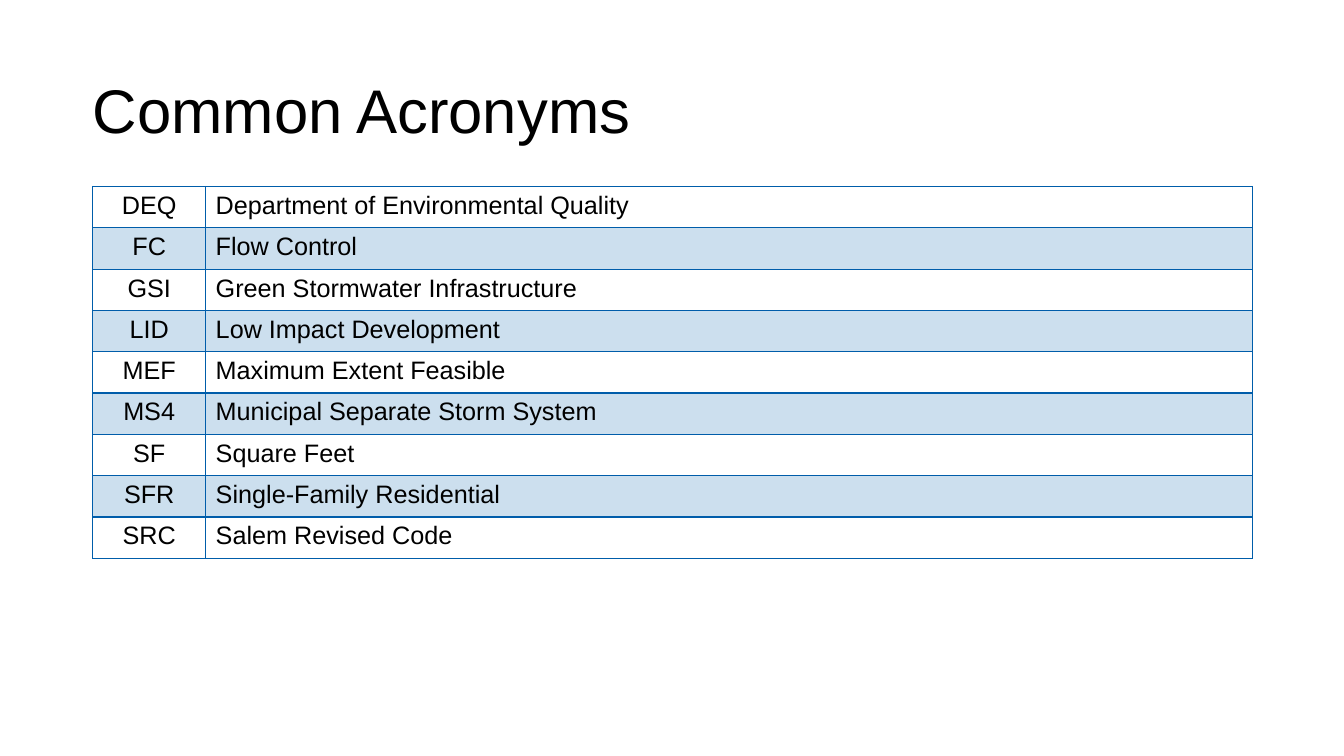
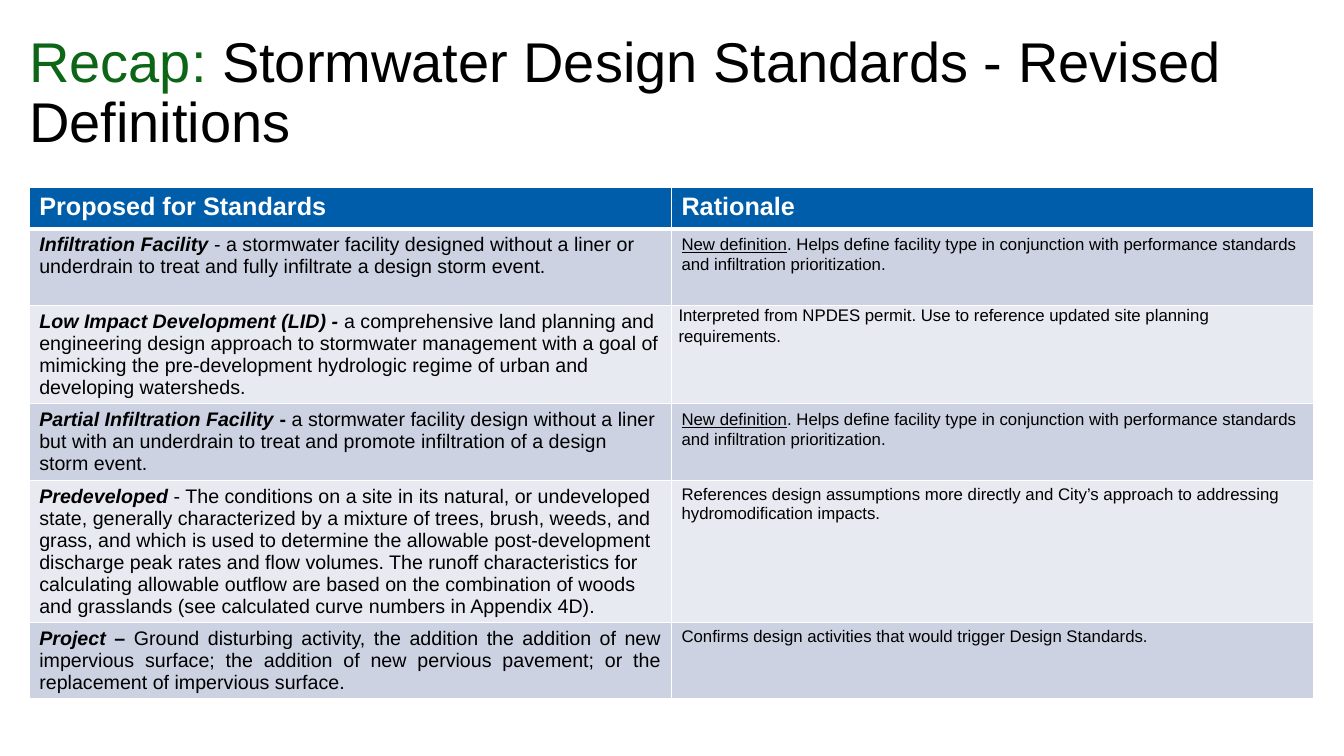
"""Build two stormwater slides: a table of acronyms and a table of revised definitions."""
from lxml.etree import SubElement
from pptx import Presentation
from pptx.dml.color import RGBColor as RGB
from pptx.enum.text import MSO_ANCHOR as Anchor, MSO_AUTO_SIZE as AutoSize, PP_ALIGN as Align
from pptx.oxml.ns import qn
from pptx.util import Inches, Pt

FONT = "Arial"
BLACK = RGB(0x00, 0x00, 0x00)
WHITE = RGB(0xFF, 0xFF, 0xFF)
BLUE = RGB(0x00, 0x5D, 0xAA)
PALE_BLUE = RGB(0xCC, 0xDF, 0xEE)
GREEN = RGB(0x0C, 0x66, 0x16)
BAND_DARK = RGB(0xCC, 0xD2, 0xE2)
BAND_LIGHT = RGB(0xE7, 0xEA, 0xF1)

SLIDE_W, SLIDE_H = 13.33, 7.5
ROW_H = 0.41
TITLE_H = 1.45
ACRONYM_LEFT, ACRONYM_COLS = 0.92, (1.12, 10.38)
RECAP_LEFT, RECAP_COLS = 0.29, (6.37, 6.37)

TITLES = [
    (ACRONYM_LEFT, 0.4, sum(ACRONYM_COLS), 44, [("Common Acronyms", "")]),
    (RECAP_LEFT, 0.21, sum(RECAP_COLS), 40,
     [("Recap: ", ""), ("Stormwater Design Standards - Revised Definitions", "")]),
]

ACRONYMS = [
    ("DEQ", "Department of Environmental Quality"),
    ("FC", "Flow Control"),
    ("GSI", "Green Stormwater Infrastructure"),
    ("LID", "Low Impact Development"),
    ("MEF", "Maximum Extent Feasible"),
    ("MS4", "Municipal Separate Storm System"),
    ("SF", "Square Feet"),
    ("SFR", "Single-Family Residential"),
    ("SRC", "Salem Revised Code"),
]

NEW_DEFINITION = [
    ("New definition", "u"),
    (". Helps define facility type in conjunction with performance standards "
     "and infiltration prioritization.", ""),
]

DEFINITIONS = [
    (ROW_H, [("Proposed for Standards", "b")], [("Rationale", "b")]),
    (0.76,
     [("Infiltration Facility ", "bi"),
      ("- a stormwater facility designed without a liner or underdrain to treat and fully "
       "infiltrate a design storm event.", "")],
     NEW_DEFINITION),
    (0.97,
     [("Low Impact Development (LID) - ", "bi"),
      ("a comprehensive land planning and engineering design approach to stormwater "
       "management with a goal of mimicking the pre-development hydrologic regime of urban "
       "and developing watersheds.", "")],
     [("Interpreted from NPDES permit. Use to reference updated site planning "
       "requirements.", "")]),
    (0.76,
     [("Partial Infiltration Facility", "bi"), (" - ", "b"),
      ("a stormwater facility design without a liner but with an underdrain to treat and "
       "promote infiltration of a design storm event.", "")],
     NEW_DEFINITION),
    (1.41,
     [("Predeveloped ", "bi"),
      ("- The conditions on a site in its natural, or undeveloped state, generally "
       "characterized by a mixture of trees, brush, weeds, and grass, and which is used to "
       "determine the allowable post-development discharge peak rates and flow volumes. The "
       "runoff characteristics for calculating allowable outflow are based on the "
       "combination of woods and grasslands (see calculated curve numbers in Appendix 4D).",
       "")],
     [("References design assumptions more directly and City’s approach to addressing "
       "hydromodification impacts.", "")]),
    (0.76,
     [("Project ", "bi"), ("– ", "b"),
      ("Ground disturbing activity, the addition the addition of new impervious surface; "
       "the addition of new pervious pavement; or the replacement of impervious surface.",
       "")],
     [("Confirms design activities that would trigger Design Standards.", "")]),
]


def write_runs(p, runs, size, color):
    for text, style in runs:
        r = p.add_run()
        r.text = text
        r.font.name, r.font.size, r.font.color.rgb = FONT, Pt(size), color
        r.font.bold = "b" in style
        r.font.italic = "i" in style
        r.font.underline = "u" in style


def style_cell(cell, fill, line, top=1, bottom=1):
    tcPr = cell._tc.get_or_add_tcPr()
    for side, width in (("L", 1), ("R", 1), ("T", top), ("B", bottom)):
        ln = SubElement(tcPr, qn(f"a:ln{side}"), w=str(Pt(width)))
        SubElement(SubElement(ln, qn("a:solidFill")), qn("a:srgbClr"), val=str(line))
    cell.fill.solid()
    cell.fill.fore_color.rgb = fill


prs = Presentation()
prs.slide_width, prs.slide_height = Inches(SLIDE_W), Inches(SLIDE_H)

for left, top, width, size, runs in TITLES:
    s = prs.slides.add_slide(prs.slide_layouts[5])
    sp = s.shapes.title
    sp.left, sp.top, sp.width, sp.height = map(Inches, (left, top, width, TITLE_H))
    tf = sp.text_frame
    tf.word_wrap, tf.auto_size, tf.vertical_anchor = True, AutoSize.NONE, Anchor.MIDDLE
    tf.margin_left = tf.margin_top = tf.margin_right = tf.margin_bottom = 0
    p = tf.paragraphs[0]
    p.alignment, p.line_spacing = Align.LEFT, 0.9
    write_runs(p, runs, size, BLACK)

acronym_slide, recap_slide = prs.slides
recap_slide.shapes.title.text_frame.paragraphs[0].runs[0].font.color.rgb = GREEN

tables = []
for s, left, top, cols, heights in (
    (acronym_slide, ACRONYM_LEFT, 1.85, ACRONYM_COLS, [ROW_H] * len(ACRONYMS)),
    (recap_slide, RECAP_LEFT, 1.86, RECAP_COLS, [row[0] for row in DEFINITIONS]),
):
    frame = s.shapes.add_table(len(heights), len(cols), Inches(left), Inches(top),
                               Inches(sum(cols)), Inches(sum(heights)))
    table = frame.table
    for column, width in zip(table.columns, cols):
        column.width = Inches(width)
    for row, height in zip(table.rows, heights):
        row.height = Inches(height)
    tables.append(table)

acronym_table, recap_table = tables
acronym_table.first_row = acronym_table.horz_banding = False

for i, texts in enumerate(ACRONYMS):
    for j, text in enumerate(texts):
        cell = acronym_table.cell(i, j)
        style_cell(cell, PALE_BLUE if i % 2 else WHITE, BLUE)
        p = cell.text_frame.paragraphs[0]
        p.alignment = Align.LEFT if j else Align.CENTER
        write_runs(p, [(text, "")], 18, BLACK)

last = len(DEFINITIONS) - 1
for i, (height, *columns) in enumerate(DEFINITIONS):
    for j, runs in enumerate(columns):
        cell = recap_table.cell(i, j)
        fill = BLUE if i == 0 else BAND_DARK if i % 2 else BAND_LIGHT
        style_cell(cell, fill, WHITE, top=3 if i == 1 else 1, bottom=3 if i == 0 else 1)
        p = cell.text_frame.paragraphs[0]
        p.alignment = Align.JUSTIFY if i == last else Align.LEFT
        if j == 1 and 1 <= i <= 3:
            p.line_spacing, p.space_before, p.space_after = 1.07, Pt(6), Pt(6)
        size = 18 if i == 0 else (14, 12)[j]
        write_runs(p, runs, size, BLACK if i else WHITE)

lid_rationale = recap_table.cell(2, 1)
lid_rationale.margin_left = lid_rationale.margin_right = Inches(0.07)
lid_rationale.margin_top = lid_rationale.margin_bottom = 0

prs.save("out.pptx")
